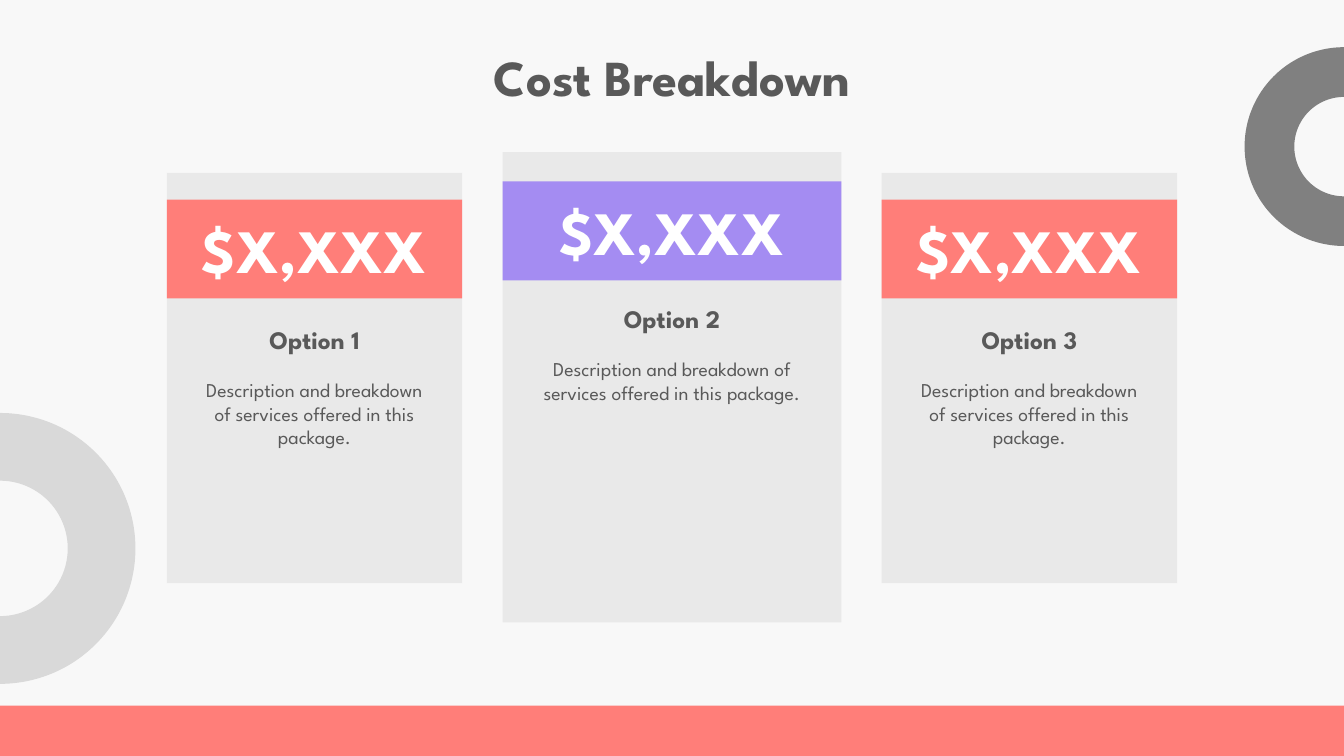
from pptx import Presentation
from pptx import util as u
from pptx.dml.color import RGBColor
from pptx.enum import shapes, text

Pt = u.Pt
SLIDE_W, SLIDE_H = 960, 540
FONT = "League Spartan"
GREY_TEXT, CORAL, VIOLET, CARD_GREY = "595959", "FF7E79", "A48CF2", "E9E9E9"
HEADING = {"size": Pt(18), "bold": True}
BODY = {"size": Pt(14), "bold": False}
PRICE = {"size": Pt(44), "bold": True}
TITLE = {"size": Pt(36), "bold": True}


def color(hex_value):
    return RGBColor.from_string(hex_value)


def add_block(slide, kind, box, fill, rotation=0):
    block = slide.shapes.add_shape(kind, *map(Pt, box))
    block.shadow.inherit = False
    block.fill.solid()
    block.fill.fore_color.rgb = color(fill)
    block.line.fill.background()
    block.rotation = rotation
    return block


def set_frame(frame, insets, anchor):
    frame.word_wrap = True
    frame.auto_size = text.MSO_AUTO_SIZE.NONE
    frame.vertical_anchor = anchor
    for side, inset in zip(("left", "top", "right", "bottom"), insets):
        setattr(frame, f"margin_{side}", Pt(inset))


def write(paragraph, words, style, hex_value=GREY_TEXT):
    paragraph.alignment = text.PP_ALIGN.CENTER
    run = paragraph.add_run()
    run.text = words
    for name, value in {"name": FONT, **style}.items():
        setattr(run.font, name, value)
    run.font.color.rgb = color(hex_value)


def add_title(slide, box, words):
    title = slide.shapes.title
    for name, value in zip(("left", "top", "width", "height"), box):
        setattr(title, name, Pt(value))
    set_frame(title.text_frame, (7.2, 3.6, 7.2, 3.6), text.MSO_ANCHOR.TOP)
    write(title.text_frame.paragraphs[0], words, TITLE)


def add_decor(slide, box):
    left, top, width, height = box
    # Half rings centred on the left and right edges
    for edge, ring_top, size, fill, rotation in (
        (left, 295, 193.5, "D9D9D9", 90),
        (left + width, 33.7, 142, "808080", 270),
    ):
        add_block(slide, shapes.MSO_SHAPE.BLOCK_ARC,
                  (edge - size / 2, top + ring_top, size, size), fill, rotation)
    # Footer band
    band_h = 36
    add_block(slide, shapes.MSO_SHAPE.RECTANGLE,
              (left, top + height - band_h, width, band_h), CORAL)


def add_option(slide, box, option, price, description, accent, price_offset):
    left, top, width, _ = box
    # Card with option name and description
    card = add_block(slide, shapes.MSO_SHAPE.RECTANGLE, box, CARD_GREY)
    frame = card.text_frame
    set_frame(frame, (21.6, 108, 21.6, 21.6), text.MSO_ANCHOR.TOP)
    write(frame.paragraphs[0], option, HEADING)
    details = frame.add_paragraph()
    details.space_before = Pt(17)
    write(details, description, BODY)
    # Price band
    band = add_block(slide, shapes.MSO_SHAPE.RECTANGLE,
                     (left, top + price_offset, width, 70.6), accent)
    set_frame(band.text_frame, (7.2, 3.6, 7.2, 3.6), text.MSO_ANCHOR.MIDDLE)
    write(band.text_frame.paragraphs[0], price, PRICE, "FFFFFF")


def add_options(slide, box):
    left, top, width, height = box
    side_w, side_h, side_drop = 211, 293, 15
    featured_w = 242
    gap = (width - 2 * side_w - featured_w) / 2
    description = "Description and breakdown of services offered in this package."
    for number in (1, 2, 3):
        if number == 2:
            card, accent, offset = (left, top, featured_w, height), VIOLET, 21
        else:
            card = (left, top + side_drop, side_w, side_h)
            accent, offset = CORAL, 19
        add_option(slide, card, f"Option {number}", "$X,XXX", description, accent, offset)
        left += card[2] + gap


def main():
    deck = Presentation()
    deck.slide_width, deck.slide_height = Pt(SLIDE_W), Pt(SLIDE_H)
    slide = deck.slides.add_slide(deck.slide_layouts[5])
    slide.background.fill.solid()
    slide.background.fill.fore_color.rgb = color("F8F8F8")
    add_decor(slide, (0, 0, SLIDE_W, SLIDE_H))
    add_title(slide, (51, 29, 858, 51), "Cost Breakdown")
    add_options(slide, (119.2, 108.6, 721.6, 336))
    deck.save("out.pptx")


if __name__ == "__main__":
    main()
